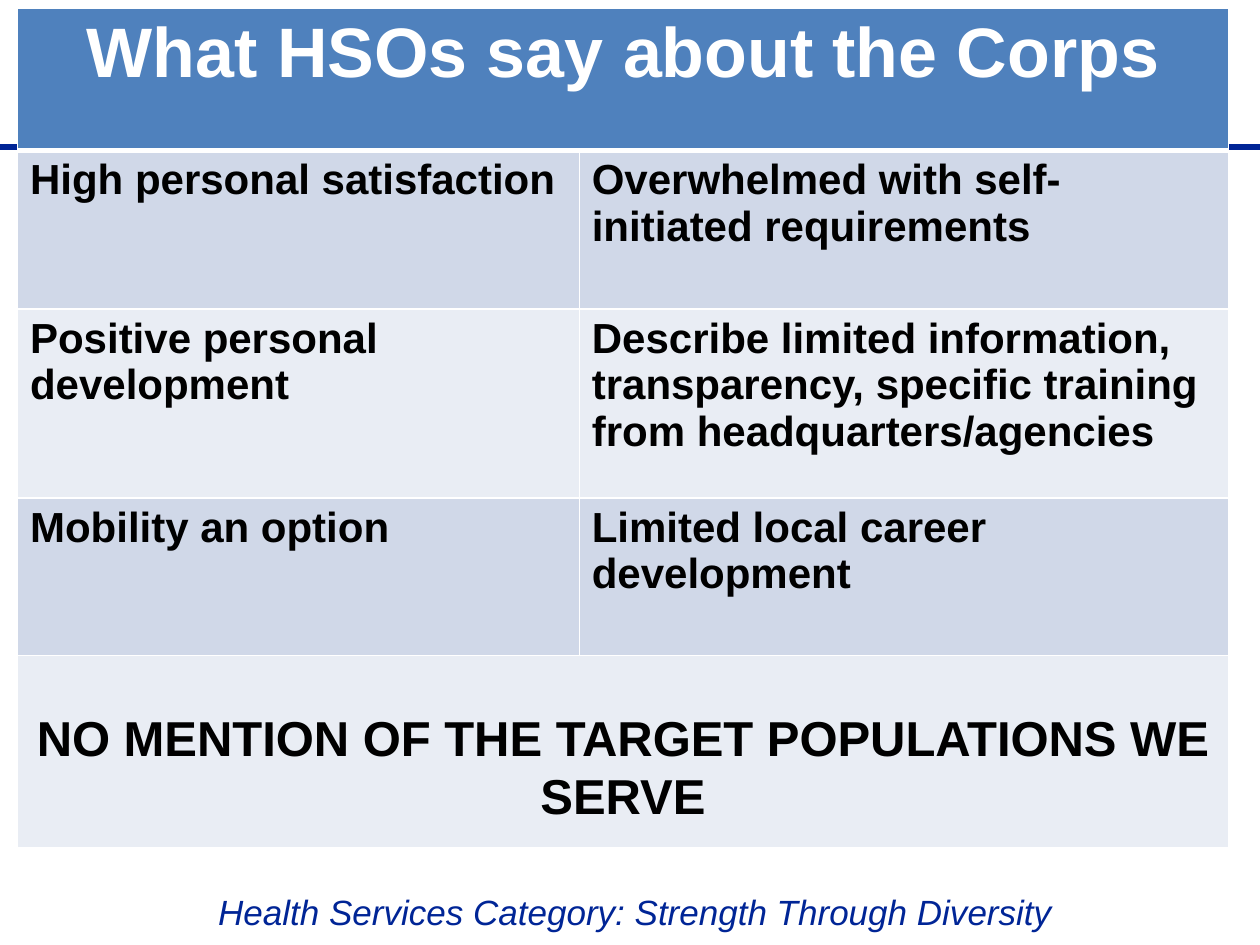
from lxml.etree import SubElement
from pptx import Presentation
from pptx.dml.color import RGBColor
from pptx.enum.shapes import MSO_CONNECTOR
from pptx.enum.text import PP_ALIGN
from pptx.oxml.ns import qn
from pptx.util import Pt

COLORS = {
    "navy": "002596",
    "header": "4F81BD",
    "band_dark": "D0D8E8",
    "band_light": "E9EDF4",
    "white": "FFFFFF",
    "black": "000000",
}
HEADING = "What HSOs say about the Corps"
REMARKS = [
    ("High personal satisfaction", "Overwhelmed with self-initiated requirements"),
    ("Positive personal development",
     "Describe limited information, transparency, specific training from headquarters/agencies"),
    ("Mobility an option", "Limited local career development"),
]
CONCLUSION = "NO MENTION OF THE TARGET POPULATIONS WE SERVE"
MOTTO = "Health Services Category: Strength Through Diversity"
COLUMN_WIDTHS = (321, 371)
ROW_HEIGHTS = (81.5, 90.5, 108, 90, 110)
TABLE_LEFT, TABLE_TOP = 10, 4.5
TABLE_WIDTH = sum(COLUMN_WIDTHS)


def rgb(name):
    return RGBColor.from_string(COLORS[name])


def write(frame, text, size, color, align=PP_ALIGN.LEFT, bold=False, italic=False):
    frame.text = text
    paragraph = frame.paragraphs[0]
    paragraph.alignment = align
    font = paragraph.runs[0].font
    font.name, font.size = "Arial", Pt(size)
    font.bold, font.italic = bold, italic
    font.color.rgb = rgb(color)


def add_rule(slide, y):
    rule = slide.shapes.add_connector(MSO_CONNECTOR.STRAIGHT, Pt(0), Pt(y), Pt(720), Pt(y))
    rule.line.color.rgb = rgb("navy")
    rule.line.width = Pt(3)
    SubElement(rule._element.spPr, qn("a:effectLst"))


def add_centred_text(slide, box, text, size, color, **style):
    caption = slide.shapes.add_textbox(*(Pt(length) for length in box))
    caption.text_frame.word_wrap = True
    write(caption.text_frame, text, size, color, PP_ALIGN.CENTER, **style)


def style_cell(cell, fill, bottom=1):
    properties = cell._tc.get_or_add_tcPr()
    for side, width in (("L", 1), ("R", 1), ("T", 1), ("B", bottom)):
        border = SubElement(properties, qn(f"a:ln{side}"), w=str(Pt(width)))
        SubElement(SubElement(border, qn("a:solidFill")), qn("a:srgbClr"), val=COLORS["white"])
    cell.fill.solid()
    cell.fill.fore_color.rgb = rgb(fill)


def add_remarks_table(slide):
    table = slide.shapes.add_table(
        len(ROW_HEIGHTS), len(COLUMN_WIDTHS), Pt(TABLE_LEFT), Pt(TABLE_TOP),
        Pt(TABLE_WIDTH), Pt(sum(ROW_HEIGHTS))).table
    for column, width in zip(table.columns, COLUMN_WIDTHS):
        column.width = Pt(width)
    for index, (row, height) in enumerate(zip(table.rows, ROW_HEIGHTS)):
        row.height = Pt(height)
        band = "band_dark" if index % 2 else "band_light"
        for cell in row.cells:
            style_cell(cell, band if index else "header", 1 if index else 3)
    for index in (0, len(ROW_HEIGHTS) - 1):
        table.cell(index, 0).merge(table.cell(index, 1))

    write(table.cell(0, 0).text_frame, HEADING, 40, "white", PP_ALIGN.CENTER, bold=True)
    for row, pair in enumerate(REMARKS, 1):
        for column, remark in enumerate(pair):
            write(table.cell(row, column).text_frame, remark, 24, "black", bold=True)


def main():
    deck = Presentation()
    deck.slide_width, deck.slide_height = Pt(720), Pt(540)
    slide = deck.slides.add_slide(deck.slide_layouts[6])
    add_rule(slide, 84)
    add_centred_text(slide, (60.5, 505.5, 605, 31.5), MOTTO, 20, "navy", italic=True)
    add_remarks_table(slide)
    add_centred_text(slide, (TABLE_LEFT, 400.5, TABLE_WIDTH, 108.5), CONCLUSION, 28, "black", bold=True)
    deck.save("out.pptx")


if __name__ == "__main__":
    main()
